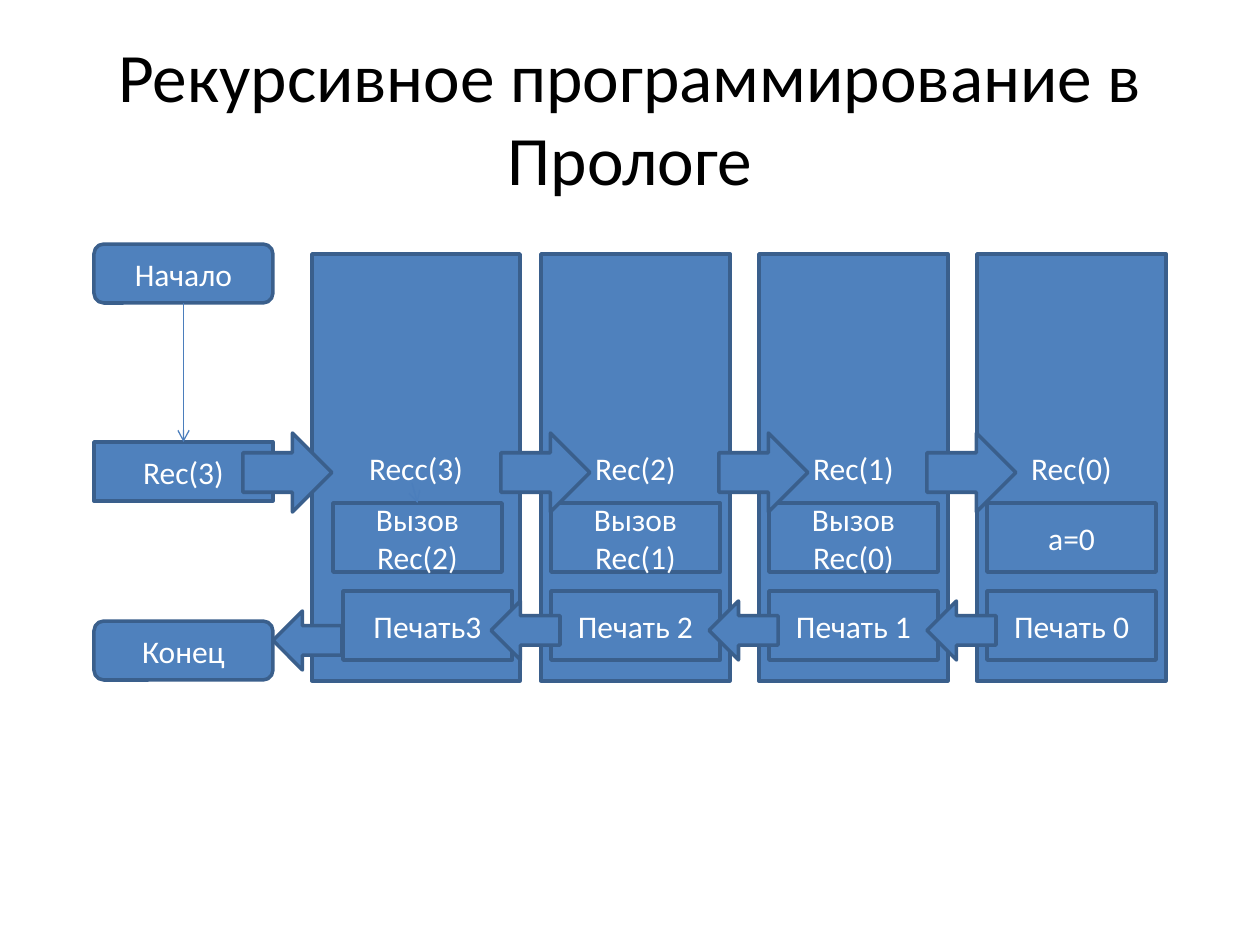
from lxml.etree import SubElement
from pptx import Presentation
from pptx.dml.color import RGBColor
from pptx.enum.shapes import MSO_CONNECTOR, MSO_SHAPE
from pptx.enum.text import MSO_ANCHOR, PP_ALIGN
from pptx.oxml.ns import qn
from pptx.util import Emu, Pt

COLORS = {"fill": "4F81BD", "outline": "3A5F8C", "connector": "4B7EBC",
          "title": "000000", "label": "FFFFFF"}
FONT = "Calibri"
EMU_PER_PX = 914400 / 126
COLUMN_STEP = 218
COLUMNS = [
    ("Recc(3)", "Вызов\nRec(2)", "Печать3"),
    ("Rec(2)", "Вызов\nRec(1)", "Печать 2"),
    ("Rec(1)", "Вызов\nRec(0)", "Печать 1"),
    ("Rec(0)", "a=0", "Печать 0"),
]


def px(*lengths):
    return [Emu(round(length * EMU_PER_PX)) for length in lengths]


def color(name):
    return RGBColor.from_string(COLORS[name])


def write_text(shape, text, size, color_name):
    frame = shape.text_frame
    frame.word_wrap = True
    frame.vertical_anchor = MSO_ANCHOR.MIDDLE
    frame.text = text
    for paragraph in frame.paragraphs:
        paragraph.alignment = PP_ALIGN.CENTER
        paragraph.font.name = FONT
        paragraph.font.size = Pt(size)
        paragraph.font.color.rgb = color(color_name)


def add_title(slide, text):
    title = slide.shapes.add_textbox(*px(63, 38, 1134, 157))
    write_text(title, text, 39.6, "title")


def add_block(slide, kind, bounds, text=""):
    shape = slide.shapes.add_shape(kind, *px(*bounds))
    shape.shadow.inherit = False
    shape.fill.solid()
    shape.fill.fore_color.rgb = color("fill")
    shape.line.color.rgb = color("outline")
    shape.line.width = Pt(2)
    if text:
        write_text(shape, text, 18, "label")
    return shape


def add_arrow_line(slide, start, end_shape, start_shape=None):
    connector = slide.shapes.add_connector(
        MSO_CONNECTOR.STRAIGHT, *px(*start, *start))
    if start_shape is not None:
        connector.begin_connect(start_shape, 2)
    connector.end_connect(end_shape, 0)
    connector.line.color.rgb = color("connector")
    connector.line.width = Pt(0.75)
    SubElement(connector.line._get_or_add_ln(), qn("a:tailEnd"), type="arrow")
    SubElement(connector._element.spPr, qn("a:effectLst"))


def add_column(slide, index, labels):
    """Draw one recursion level and return its call box."""
    offset = index * COLUMN_STEP
    first = index == 0
    name, call, output = labels
    frame_left, frame_width = (312, 208) if first else (323 + offset, 189)
    output_left = 343 if first else 333 + offset
    add_block(slide, MSO_SHAPE.RECTANGLE, (frame_left, 254, frame_width, 427), name)
    call_box = add_block(slide, MSO_SHAPE.RECTANGLE, (333 + offset, 503, 169, 69), call)
    add_block(slide, MSO_SHAPE.RECTANGLE, (output_left, 591, 169, 69), output)
    return call_box


def main():
    presentation = Presentation()
    presentation.slide_width, presentation.slide_height = px(1260, 945)
    slide = presentation.slides.add_slide(presentation.slide_layouts[6])

    add_title(slide, "Рекурсивное программирование в Прологе")
    terminal = MSO_SHAPE.FLOWCHART_ALTERNATE_PROCESS
    start = add_block(slide, terminal, (94, 244, 179, 59), "Начало")
    query = add_block(slide, MSO_SHAPE.RECTANGLE, (94, 442, 179, 59), "Rec(3)")
    add_block(slide, terminal, (94, 621, 179, 59), "Конец")

    call_boxes = [add_column(slide, index, labels)
                  for index, labels in enumerate(COLUMNS)]
    add_arrow_line(slide, (184, 303), query, start)
    add_arrow_line(slide, (412, 483), call_boxes[0])

    for left in (501, 719, 927, 243):
        add_block(slide, MSO_SHAPE.RIGHT_ARROW, (left, 433, 89, 79))
    for left, top in ((273, 611), (927, 601), (709, 601), (491, 601)):
        add_block(slide, MSO_SHAPE.LEFT_ARROW, (left, top, 69, 59))

    presentation.save("out.pptx")


if __name__ == "__main__":
    main()
